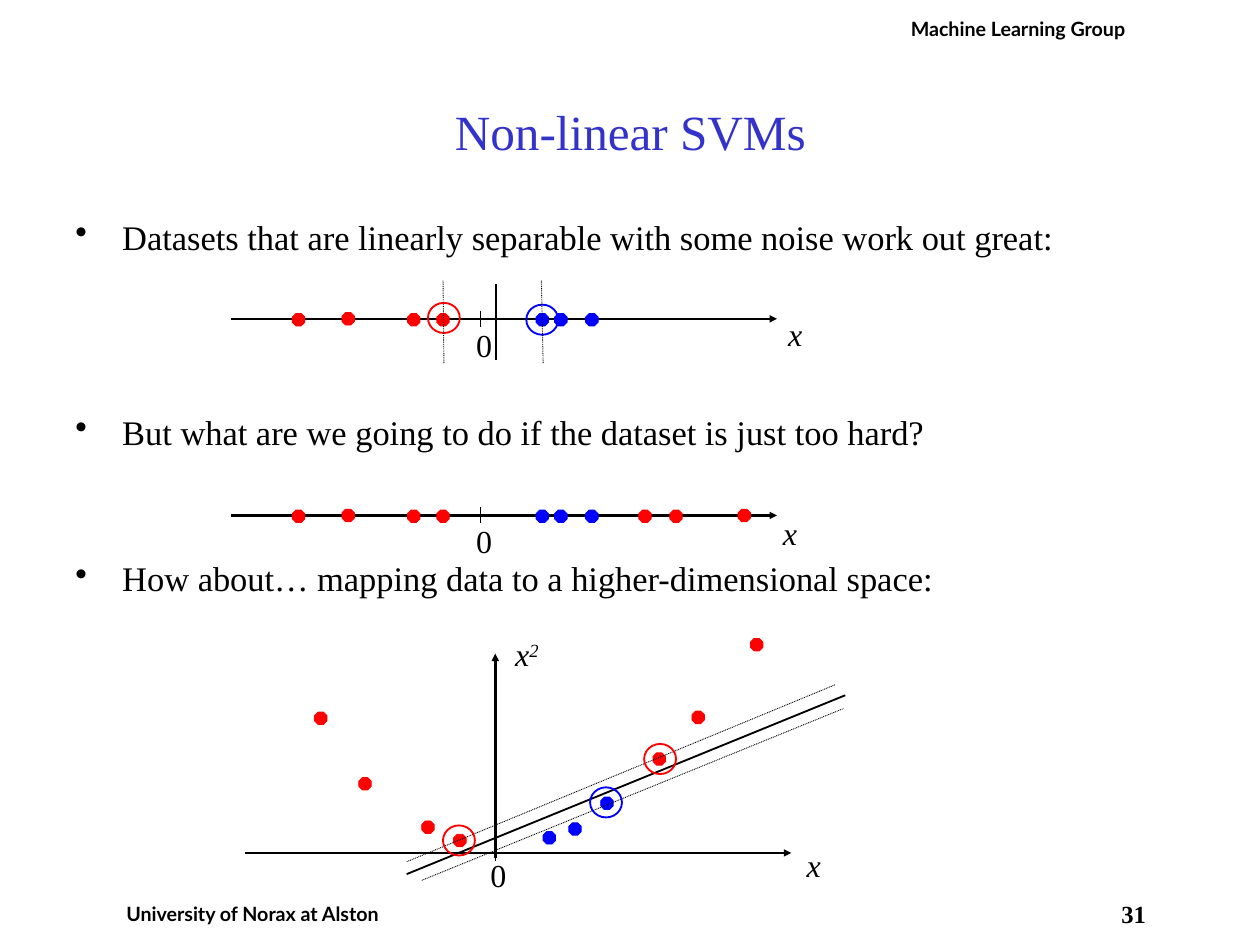
from lxml.etree import SubElement
from pptx import Presentation
from pptx.dml.color import RGBColor
from pptx.enum.dml import MSO_LINE
from pptx.enum.shapes import MSO_CONNECTOR, MSO_SHAPE
from pptx.enum.text import MSO_ANCHOR as Anchor, PP_ALIGN as Align
from pptx.oxml.ns import qn
from pptx.util import Emu, Pt

BLACK, WHITE, RED, BLUE, TITLE_BLUE = "000000", "FFFFFF", "FF0000", "0000FF", "3333CC"
SERIF, SANS = "Times New Roman", "Lato"
DOT = 14
RING_WIDTH, RING_HEIGHT = 36, 34
BULLET_INDENT = 53
LINE_HEIGHT, LINE_PITCH = 32.2, 39.2


def px(length):
    """Convert px, at 100 to the inch, into EMU."""
    return Emu(length * 9144)


def color(hex_string):
    return RGBColor.from_string(hex_string)


class SlideBuilder:
    def __init__(self, slide):
        self.slide = slide

    def format_run(self, run, size, font=SERIF, text_color=BLACK, bold=False, italic=False):
        run.font.size = Pt(size)
        run.font.name = font
        run.font.color.rgb = color(text_color)
        run.font.bold = bold
        run.font.italic = italic

    def text(self, box, text, size, align=Align.CENTER, anchor=Anchor.TOP,
             margins=(14, 7), fill=None, **style):
        """Add a text box; each line of text becomes a paragraph."""
        shape = self.slide.shapes.add_textbox(*map(px, box))
        if fill:
            shape.fill.solid()
            shape.fill.fore_color.rgb = color(fill)
        frame = shape.text_frame
        frame.word_wrap = True
        frame.vertical_anchor = anchor
        frame.margin_left = frame.margin_right = px(margins[0])
        frame.margin_top = frame.margin_bottom = px(margins[1])
        frame.text = text
        for paragraph in frame.paragraphs:
            paragraph.alignment = align
            for run in paragraph.runs:
                self.format_run(run, size, **style)
        return frame

    def bullets(self, box, items, size):
        """Add bullets from (text, lines below the previous bullet) pairs."""
        frame = self.text(box, "\n".join(text for text, _ in items), size, align=Align.LEFT)
        for paragraph, (_, lines) in zip(frame.paragraphs, items):
            if lines:
                paragraph.space_before = Pt(lines * LINE_PITCH - LINE_HEIGHT)
            properties = paragraph._p.get_or_add_pPr()
            properties.set("marL", str(px(BULLET_INDENT)))
            properties.set("indent", str(px(-BULLET_INDENT)))
            SubElement(properties, qn("a:buChar")).set("char", "•")

    def label(self, left, top, width, text, italic=False):
        return self.text((left, top, width, 58), text, 26, italic=italic)

    def zero(self, left, top):
        self.label(left, top, 53, "0")

    def variable(self, left, top, power=""):
        frame = self.label(left, top, 71, "x", italic=True)
        if power:
            run = frame.paragraphs[0].add_run()
            run.text = power
            self.format_run(run, 26, italic=True)
            run.font._element.set("baseline", "30000")

    def line(self, start, end, width=0.75, dotted=False, arrow=False):
        connector = self.slide.shapes.add_connector(
            MSO_CONNECTOR.STRAIGHT, *map(px, (*start, *end)))
        connector.line.color.rgb = color(BLACK)
        connector.line.width = Pt(width)
        if dotted:
            connector.line.dash_style = MSO_LINE.ROUND_DOT
        properties = connector._element.spPr
        if arrow:
            SubElement(properties.find(qn("a:ln")), qn("a:tailEnd")).set("type", "triangle")
        SubElement(properties, qn("a:effectLst"))

    def outline(self, kind, box, line_color, width):
        shape = self.slide.shapes.add_shape(kind, *map(px, box))
        shape.shadow.inherit = False
        shape.fill.background()
        shape.line.color.rgb = color(line_color)
        shape.line.width = Pt(width)
        return shape

    def dot(self, left, top, dot_color):
        shape = self.outline(MSO_SHAPE.OCTAGON, (left, top, DOT, DOT), dot_color, 0.75)
        shape.fill.solid()
        shape.fill.fore_color.rgb = color(dot_color)

    def dots(self, points, dot_color):
        for left, top in points:
            self.dot(left, top, dot_color)

    def ring(self, left, top, ring_color):
        self.outline(MSO_SHAPE.OVAL, (left, top, RING_WIDTH, RING_HEIGHT), ring_color, 1.5)

    def axis(self, left, top, zero_left):
        """Add a horizontal arrow with a tick at zero."""
        self.line((left, top), (left + 616, top), 2, arrow=True)
        self.line((zero_left, top - 9), (zero_left, top + 9))

    def number_line(self, top, red_dots, blue_dots):
        """Add an axis with dots given as (left, rise above the usual height)."""
        self.axis(261, top, 542)
        self.zero(520, top)
        for points, dot_color in ((red_dots, RED), (blue_dots, BLUE)):
            self.dots([(left, top - 6 - rise) for left, rise in points], dot_color)


def add_frame_texts(builder):
    builder.text((1256, 1015, 47, 52), "31", 20, margins=(0, 0), fill=WHITE, bold=True)
    for box, text in (((119, 1011, 332, 68 - 12), "University of Norax at Alston"),
                      ((1007, 12, 284, 68), "Machine Learning Group")):
        builder.text(box, text, 16, margins=(7, 7), fill=WHITE, font=SANS, bold=True)
    builder.text((107, 59, 1209, 178), "Non-linear SVMs", 40,
                 anchor=Anchor.MIDDLE, text_color=TITLE_BLUE)
    builder.bullets((71, 237, 1280, 782), (
        ("Datasets that are linearly separable with some noise work out great:", 0),
        ("But what are we going to do if the dataset is just too hard?", 4),
        ("How about… mapping data to a higher-dimensional space:", 3)), 28)


def add_number_lines(builder):
    left_reds = [(330, 0), (386, 1), (460, 0), (493, 0)]
    right_reds = [(721, 0), (756, 0), (833, 1)]
    blues = [(605, 0), (626, 0), (661, 0)]

    builder.number_line(360, left_reds, blues)
    builder.variable(862, 348)
    builder.line((560, 321), (560, 407), 1.5)
    builder.ring(594, 344, BLUE)
    builder.ring(483, 342, RED)
    builder.line((613, 410), (611, 317), dotted=True)
    builder.line((501, 410), (500, 317), dotted=True)

    builder.number_line(582, left_reds + right_reds, blues)
    builder.variable(856, 573)


def add_mapped_plot(builder):
    builder.axis(277, 963, 559)
    builder.line((559, 969), (559, 738), 2, arrow=True)
    builder.zero(536, 959)
    builder.variable(559, 710, power="2")
    builder.variable(883, 948)
    builder.dots([(355, 804), (405, 878), (476, 927), (512, 942),
                  (737, 850), (781, 803), (847, 721)], RED)
    builder.dots([(613, 939), (642, 929), (678, 900)], BLUE)
    builder.line((459, 987), (954, 785), 1.5)
    builder.line((459, 973), (943, 773), dotted=True)
    builder.line((476, 994), (952, 800), dotted=True)
    builder.ring(727, 840, RED)
    builder.ring(666, 889, BLUE)
    builder.ring(500, 932, RED)


def main():
    presentation = Presentation()
    presentation.slide_width, presentation.slide_height = px(1422), px(1067)
    builder = SlideBuilder(presentation.slides.add_slide(presentation.slide_layouts[6]))
    add_frame_texts(builder)
    add_number_lines(builder)
    add_mapped_plot(builder)
    presentation.save("out.pptx")


if __name__ == "__main__":
    main()
